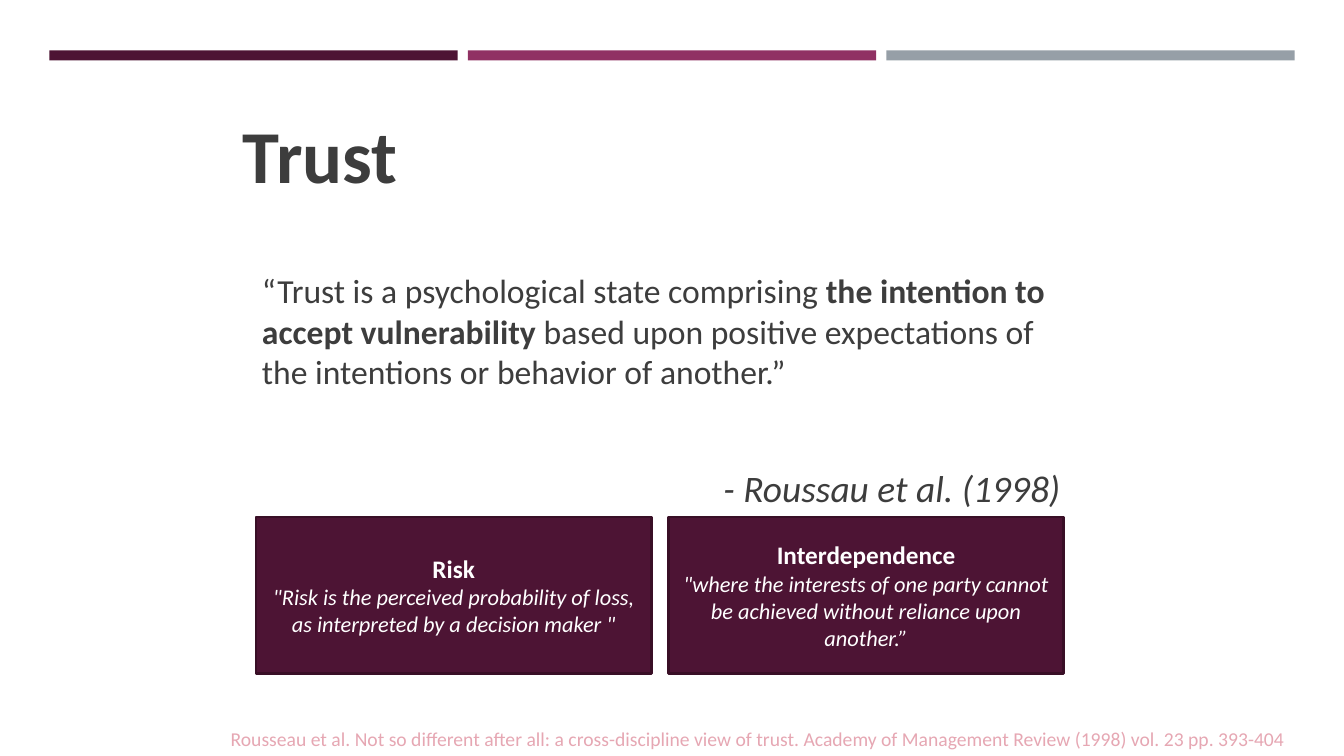
from pptx import Presentation
from pptx.dml.color import RGBColor
from pptx.enum.shapes import MSO_SHAPE
from pptx.enum.text import MSO_ANCHOR, MSO_AUTO_SIZE, PP_ALIGN
from pptx.util import Inches, Pt

COLORS = {
    "plum": "4D1434",
    "plum_edge": "390F26",
    "magenta": "903163",
    "gray": "969FA7",
    "text": "3D3D3D",
    "white": "FFFFFF",
    "source": "E6A7B3",
}

CONCEPTS = [
    ("Risk", '"Risk is the perceived probability of loss, as interpreted by a decision maker "'),
    ("Interdependence",
     '"where the interests of one party cannot be achieved without reliance upon another.”'),
]


def rgb(name):
    return RGBColor.from_string(COLORS[name])


def style(paragraph, size, color, align=PP_ALIGN.LEFT, bold=False, italic=False):
    paragraph.alignment = align
    font = paragraph.font
    font.name = "Calibri"
    font.size = Pt(size)
    font.bold = bold
    font.italic = italic
    font.color.rgb = rgb(color)


def add_block(slide, left, top, width, height, fill):
    block = slide.shapes.add_shape(
        MSO_SHAPE.RECTANGLE, Inches(left), Inches(top), Inches(width), Inches(height))
    block.shadow.inherit = False
    block.fill.solid()
    block.fill.fore_color.rgb = rgb(fill)
    block.line.fill.background()
    return block


def add_text_frame(slide, left, top, width, height):
    box = slide.shapes.add_textbox(Inches(left), Inches(top), Inches(width), Inches(height))
    box.text_frame.word_wrap = True
    return box.text_frame


def add_top_bars(slide, left, top, width, height, gap=0.1):
    fills = ["plum", "magenta", "gray"]
    bar_width = (width - gap * (len(fills) - 1)) / len(fills)
    for index, fill in enumerate(fills):
        add_block(slide, left + index * (bar_width + gap), top, bar_width, height, fill)


def place_title(slide, left, top, width, height):
    title = slide.shapes.title
    title.left, title.top = Inches(left), Inches(top)
    title.width, title.height = Inches(width), Inches(height)
    frame = title.text_frame
    frame.text = "Trust"
    frame.auto_size = MSO_AUTO_SIZE.NONE
    frame.vertical_anchor = MSO_ANCHOR.MIDDLE
    frame.margin_top = frame.margin_bottom = 0
    style(frame.paragraphs[0], 53.3, "text", bold=True)


def add_quote(slide, left, top, width, height):
    frame = add_text_frame(slide, left, top, width, height)
    frame.margin_top = frame.margin_bottom = 0
    quote = frame.paragraphs[0]
    style(quote, 24, "text")
    quote.add_run().text = "“Trust is a psychological state comprising "
    emphasis = quote.add_run()
    emphasis.text = "the intention to accept vulnerability"
    emphasis.font.bold = True
    quote.add_run().text = (
        " based upon positive expectations of the intentions or behavior of another.”")
    author = frame.add_paragraph()
    author.text = "- Roussau et al. (1998)"
    author.space_before = Pt(53)
    style(author, 26.7, "text", PP_ALIGN.RIGHT, italic=True)


def add_concepts(slide, left, top, width, height, gap=0.17):
    card_width = (width - gap * (len(CONCEPTS) - 1)) / len(CONCEPTS)
    for index, (name, definition) in enumerate(CONCEPTS):
        card = add_block(
            slide, left + index * (card_width + gap), top, card_width, height, "plum")
        card.line.color.rgb = rgb("plum_edge")
        card.line.width = Pt(1.75)
        frame = card.text_frame
        frame.word_wrap = True
        frame.vertical_anchor = MSO_ANCHOR.MIDDLE
        heading = frame.paragraphs[0]
        heading.text = name
        style(heading, 18, "white", PP_ALIGN.CENTER, bold=True)
        explanation = frame.add_paragraph()
        explanation.text = definition
        style(explanation, 16, "white", PP_ALIGN.CENTER, italic=True)


def add_source(slide, left, top, width, height):
    source = add_text_frame(slide, left, top, width, height).paragraphs[0]
    source.text = (
        "Rousseau et al. Not so different after all: a cross-discipline view of trust. "
        "Academy of Management Review (1998) vol. 23 pp. 393-404")
    style(source, 14, "source", PP_ALIGN.RIGHT)


def main():
    presentation = Presentation()
    presentation.slide_width = Inches(13.33)
    presentation.slide_height = Inches(7.5)
    slide = presentation.slides.add_slide(presentation.slide_layouts[5])
    add_top_bars(slide, 0.49, 0.5, 12.35, 0.1)
    place_title(slide, 2.31, 1.07, 8.31, 0.9)
    add_quote(slide, 2.5, 2.68, 8.12, 2.41)
    add_source(slide, 0.41, 7.16, 12.44, 0.34)
    add_concepts(slide, 2.54, 5.13, 8.01, 1.55)
    presentation.save("out.pptx")


if __name__ == "__main__":
    main()
